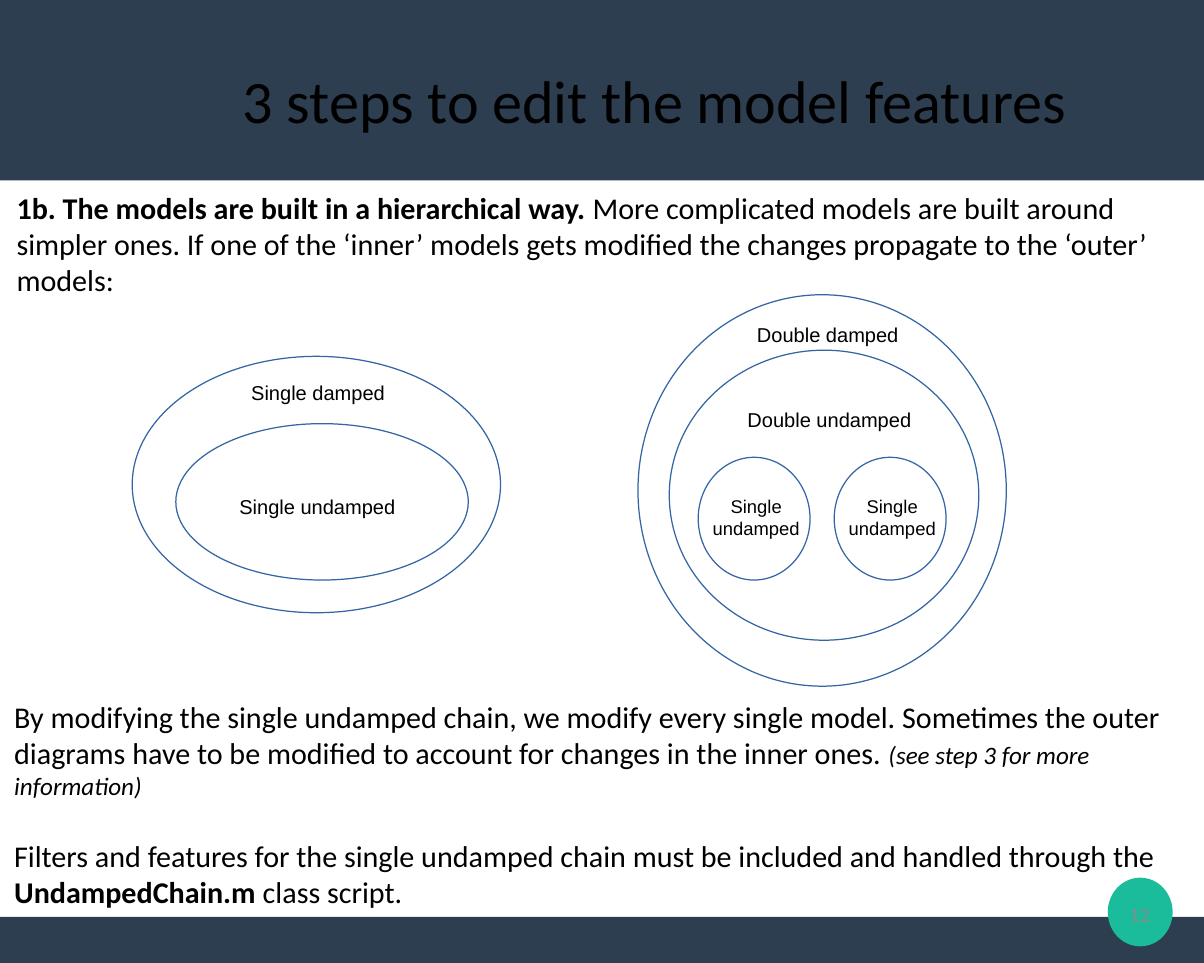
"""Build the slide on the hierarchy of damped and undamped models."""
from pptx import Presentation
from pptx import util as u
from pptx.dml.color import RGBColor
from pptx.enum import shapes, text

NAVY = RGBColor(0x2C, 0x3E, 0x50)
TEAL = RGBColor(0x1A, 0xBC, 0x9C)
BLUE = RGBColor(0x34, 0x65, 0xA4)
GREY = RGBColor(0x8B, 0x8B, 0x8B)
WHITE = RGBColor(0xFF, 0xFF, 0xFF)
BLACK = RGBColor(0, 0, 0)

WIDTH, HEIGHT = 25.4, 20.32
HEADER_HEIGHT, FOOTER_TOP = 3.81, 19.35
BADGE = (23.37, 18.52, 1.37, 1.45)
LABEL_SIZE = (5.03, 2.87)
INSETS = (0.25, 0.13)

TITLE = [[("3 steps to edit the model features", 36, "")]]
INTRO = [[
    ("1b. The models are built in a hierarchical way.", 18, "b"),
    (" More complicated models are built around simpler ones. If one of the ‘inner’ models "
     "gets modified the changes propagate to the ‘outer’ models:", 18, ""),
]]
CLOSING = [
    [("By modifying the single undamped chain, we modify every single model. Sometimes the outer "
      "diagrams have to be modified to account for changes in the inner ones. ", 18, ""),
     ("(see step 3 for more information)", 15, "i")],
    [("Filters and features for the single undamped chain must be included and handled "
      "through the ", 18, ""),
     ("UndampedChain.m ", 18, "b"),
     ("class script.", 18, "")],
]
PAGE_NUMBER = [[("12", 12, "")]]

MODELS = [
    ("Single damped", (2.79, 7.52, 7.77, 5.41), (5.05, 7.9), WHITE),
    ("Single undamped", (3.71, 8.94, 6.17, 3.3), (4.8, 10.31), None),
    ("Double damped", (13.46, 6.22, 7.77, 8.26), (15.72, 6.68), WHITE),
    ("Double undamped", (14.12, 7.39, 6.53, 6.12), (15.52, 8.46), None),
]
CHAIN_WORDS = ("Single", "undamped")
CHAIN_LEFT, CHAIN_TOP, CHAIN_PITCH = 14.73, 9.65, 2.87
CHAIN_SIZE = (2.36, 2.59)
CHAIN_COUNT = 2


def add_figure(slide, preset, box, fill=None, line=None):
    figure = slide.shapes.add_shape(preset, *map(u.Cm, box))
    figure.shadow.inherit = False
    if fill is None:
        figure.fill.background()
    else:
        figure.fill.solid()
        figure.fill.fore_color.rgb = fill
    if line is None:
        figure.line.fill.background()
    else:
        figure.line.color.rgb = line
        figure.line.width = u.Pt(0.75)


def add_text(slide, box, paragraphs, font="Calibri", color=BLACK, align=text.PP_ALIGN.LEFT,
             anchor=text.MSO_ANCHOR.TOP, insets=INSETS, gap=0):
    frame = slide.shapes.add_textbox(*map(u.Cm, box)).text_frame
    frame.word_wrap = True
    frame.vertical_anchor = anchor
    frame.margin_left = frame.margin_right = u.Cm(insets[0])
    frame.margin_top = frame.margin_bottom = u.Cm(insets[1])
    for index, runs in enumerate(paragraphs):
        paragraph = frame.add_paragraph() if index else frame.paragraphs[0]
        paragraph.alignment = align
        if index and gap:
            paragraph.space_before = u.Pt(gap)
        for words, size, style in runs:
            run = paragraph.add_run()
            run.text = words
            run.font.name = font
            run.font.size = u.Pt(size)
            run.font.bold = "b" in style
            run.font.italic = "i" in style
            run.font.color.rgb = color


def main():
    deck = Presentation()
    deck.slide_width, deck.slide_height = u.Cm(WIDTH), u.Cm(HEIGHT)
    slide = deck.slides.add_slide(deck.slide_layouts[6])
    rectangle, oval = shapes.MSO_SHAPE.RECTANGLE, shapes.MSO_SHAPE.OVAL
    center, middle = text.PP_ALIGN.CENTER, text.MSO_ANCHOR.MIDDLE

    add_figure(slide, rectangle, (0, FOOTER_TOP, WIDTH, HEIGHT - FOOTER_TOP), NAVY)
    add_figure(slide, rectangle, (0, 0, WIDTH, HEADER_HEIGHT), NAVY)
    add_figure(slide, oval, BADGE, TEAL)
    add_text(slide, (2.01, 0.81, 23.6, 2.57), TITLE, align=center, anchor=middle, insets=(0, 0))
    add_text(slide, (0.1, HEADER_HEIGHT + 0.05, 25.3, 2.46), INTRO)

    for name, ellipse, label, fill in MODELS:
        add_figure(slide, oval, ellipse, fill, BLUE)
        add_text(slide, label + LABEL_SIZE, [[(name, 12, "")]], font="Arial")

    chain_label = [[(word, 11, "")] for word in CHAIN_WORDS]
    for index in range(CHAIN_COUNT):
        left = CHAIN_LEFT + index * CHAIN_PITCH
        add_figure(slide, oval, (left, CHAIN_TOP) + CHAIN_SIZE, line=BLUE)
        add_text(slide, (left - 1.29, CHAIN_TOP + 0.66) + LABEL_SIZE, chain_label,
                 font="Arial", align=center)

    add_text(slide, (0.05, 14.61, 25.3, 4.67), CLOSING, gap=22)
    add_text(slide, (18.59, 18.75, 5.92, 1.09), PAGE_NUMBER, color=GREY,
             align=text.PP_ALIGN.RIGHT, anchor=middle)
    deck.save("out.pptx")


if __name__ == "__main__":
    main()
